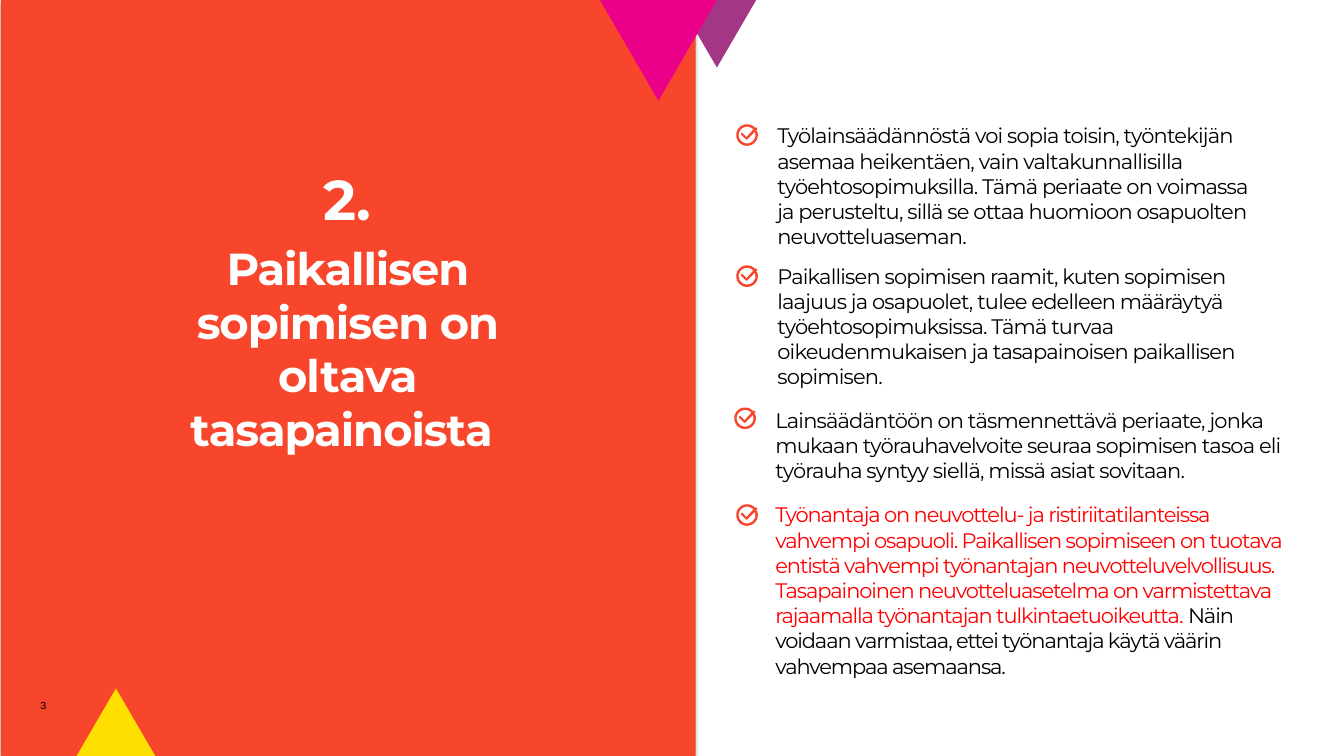
"""Build a slide on balanced local bargaining with four checked points."""
import math

from lxml import etree
from pptx import Presentation
from pptx.dml.color import RGBColor
from pptx.enum import shapes, text
from pptx.oxml import ns
from pptx.util import Inches, Pt

ORANGE = RGBColor(0xF8, 0x46, 0x2C)
YELLOW = RGBColor(0xFF, 0xDF, 0x00)
PURPLE = RGBColor(0xA3, 0x37, 0x86)
PINK = RGBColor(0xEB, 0x00, 0x89)
WHITE = RGBColor(0xFF, 0xFF, 0xFF)
BLACK = RGBColor(0x00, 0x00, 0x00)
RED = RGBColor(0xFF, 0x00, 0x00)

HEADING_FONT = "Montserrat"
NUMBER_FONT = "Karla"

PANEL = (0.01, 0, 6.89, 7.5)
TRIANGLES = [
    ((0.76, 6.83, 0.78, 0.67), YELLOW, 0),
    ((6.72, 0, 0.78, 0.67), PURPLE, 180),
    ((5.95, 0, 1.16, 1), PINK, 180),
]

HEADING_AREA = (1.17, 1.58, 4.55, 1.77)
HEADING = [
    ("2.", 40, -0.5),
    ("Paikallisen sopimisen on oltava tasapainoista ", 32, -0.8),
]

NUMBER_AREA = (0.3, 6.88, 0.44, 0.37)
PAGE_NUMBER = "3"

POINTS = [
    ((7.61, 1.17, 5.01, 0.82), (7.31, 1.24), -0.6, [
        ("Työlainsäädännöstä voi sopia toisin, työntekijän asemaa heikentäen, "
         "vain valtakunnallisilla työehtosopimuksilla. Tämä periaate on voimassa "
         "ja perusteltu, sillä se ottaa huomioon osapuolten neuvotteluaseman.", BLACK)]),
    ((7.61, 2.56, 5.1, 1.32), (7.31, 2.64), -0.6, [
        ("Paikallisen sopimisen raamit, kuten sopimisen laajuus ja osapuolet, "
         "tulee edelleen määräytyä työehtosopimuksissa. Tämä turvaa "
         "oikeudenmukaisen ja tasapainoisen paikallisen sopimisen.", BLACK)]),
    ((7.59, 3.99, 5.25, 0.82), (7.29, 4.05), -0.6, [
        ("Lainsäädäntöön on täsmennettävä periaate, jonka mukaan työrauhavelvoite "
         "seuraa sopimisen tasoa eli työrauha syntyy siellä, missä asiat sovitaan.", BLACK)]),
    ((7.59, 4.93, 5.45, 1.05), (7.31, 5.01), -0.8, [
        ("Työnantaja on neuvottelu- ja ristiriitatilanteissa vahvempi osapuoli. "
         "Paikallisen sopimiseen on tuotava entistä vahvempi työnantajan "
         "neuvotteluvelvollisuus. Tasapainoinen neuvotteluasetelma on varmistettava "
         "rajaamalla työnantajan tulkintaetuoikeutta. ", RED),
        ("Näin voidaan varmistaa, ettei työnantaja käytä väärin "
         "vahvempaa asemaansa.", BLACK)]),
]

UNITS_PER_INCH = 1000
RING_CENTER, RING_OUTER, RING_INNER = 100, 100, 90
RING_START, RING_END, RING_STEPS = -22, 317, 48
TICK = [(50, 85), (95, 130), (185, 30), (195, 40), (95, 140), (45, 90)]


def add_plain_shape(page, kind, area, color):
    shape = page.shapes.add_shape(kind, *map(Inches, area))
    shape.shadow.inherit = False
    shape.fill.solid()
    shape.fill.fore_color.rgb = color
    shape.line.fill.background()
    return shape


def add_panel_shadow(panel):
    effects = panel._element.spPr.find(ns.qn("a:effectLst"))
    shadow = etree.SubElement(effects, ns.qn("a:outerShdw"), blurRad=str(Pt(3.1)),
                              dist=str(Pt(1.8)), dir="5400000", rotWithShape="0")
    color = etree.SubElement(shadow, ns.qn("a:srgbClr"), val=str(BLACK))
    etree.SubElement(color, ns.qn("a:alpha"), val="35000")


def place(page, box, area):
    page.shapes._spTree.append(box._element)
    box.left, box.top, box.width, box.height = map(Inches, area)
    frame = box.text_frame
    frame.word_wrap = True
    frame.auto_size = text.MSO_AUTO_SIZE.NONE
    frame.vertical_anchor = text.MSO_ANCHOR.TOP
    return frame


def remove_bullet(para):
    properties = para._p.get_or_add_pPr()
    properties.set("marL", "0")
    properties.set("indent", "0")
    etree.SubElement(properties, ns.qn("a:buNone"))


def style(span, size, color, spacing=0, bold=False, name=HEADING_FONT):
    span.font.name = name
    span.font.size = Pt(size)
    span.font.bold = bold
    span.font.color.rgb = color
    span._r.get_or_add_rPr().set("spc", str(round(spacing * 100)))


def fill_heading(page):
    frame = place(page, page.shapes.title, HEADING_AREA)
    frame.text = "\n".join(words for words, _, _ in HEADING)
    for index, (para, (_, size, spacing)) in enumerate(zip(frame.paragraphs, HEADING)):
        para.alignment = text.PP_ALIGN.CENTER
        para.space_before = Pt(6.4 if index else 0)
        style(para.runs[0], size, WHITE, spacing, bold=True)


def fill_point(page, box, area, spacing, pieces):
    para = place(page, box, area).paragraphs[0]
    remove_bullet(para)
    para.alignment = text.PP_ALIGN.LEFT
    para.space_before = Pt(0)
    for words, color in pieces:
        span = para.add_run()
        span.text = words
        style(span, 15, color, spacing)


def arc(radius):
    angles = [math.radians(RING_START + (RING_END - RING_START) * step / RING_STEPS)
              for step in range(RING_STEPS + 1)]
    return [(RING_CENTER + radius * math.cos(angle), RING_CENTER + radius * math.sin(angle))
            for angle in angles]


def add_check_icon(page, left, top):
    ring = arc(RING_OUTER) + arc(RING_INNER)[::-1]
    builder = page.shapes.build_freeform(*ring[0], scale=Inches(1) / UNITS_PER_INCH)
    builder.add_line_segments(ring[1:])
    builder.move_to(*TICK[0])
    builder.add_line_segments(TICK[1:])
    icon = builder.convert_to_shape(Inches(left), Inches(top))
    icon.shadow.inherit = False
    icon.fill.solid()
    icon.fill.fore_color.rgb = ORANGE
    icon.line.color.rgb = ORANGE
    icon.line.width = Pt(1)


def main():
    deck = Presentation()
    deck.slide_width, deck.slide_height = Inches(13.33), Inches(7.5)
    page = deck.slides.add_slide(deck.slide_layouts.get_by_name("Comparison"))
    bodies = [box for box in page.placeholders if box.placeholder_format.idx]

    panel = add_plain_shape(page, shapes.MSO_SHAPE.RECTANGLE, PANEL, ORANGE)
    add_panel_shadow(panel)
    for area, color, rotation in TRIANGLES:
        triangle = add_plain_shape(page, shapes.MSO_SHAPE.ISOSCELES_TRIANGLE, area, color)
        triangle.rotation = rotation

    fill_heading(page)
    for box, (area, icon_corner, spacing, pieces) in zip(bodies, POINTS):
        fill_point(page, box, area, spacing, pieces)
        add_check_icon(page, *icon_corner)

    number = page.shapes.add_textbox(*map(Inches, NUMBER_AREA))
    frame = place(page, number, NUMBER_AREA)
    frame.text = PAGE_NUMBER
    style(frame.paragraphs[0].runs[0], 8, BLACK, name=NUMBER_FONT)
    deck.save("out.pptx")


if __name__ == "__main__":
    main()
